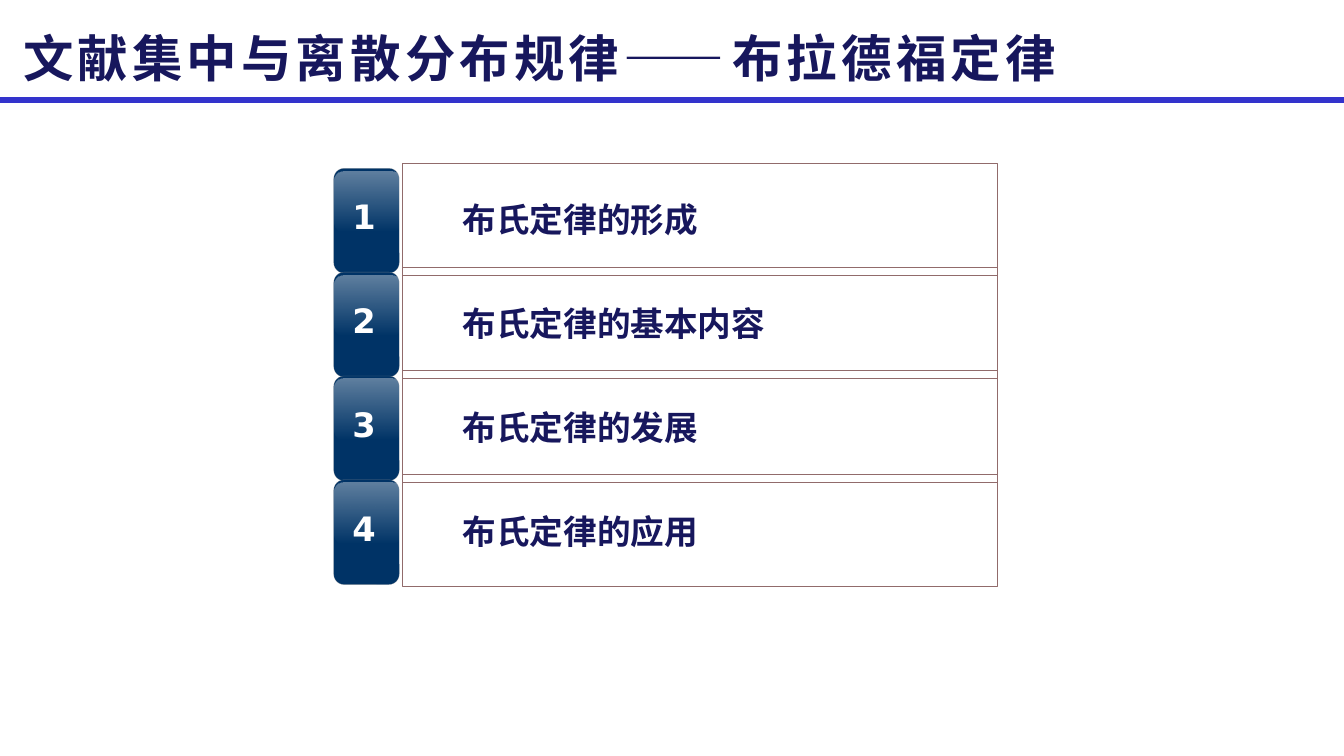
import pptx
import pptx.util
import pptx.dml.color
import pptx.enum.shapes
import pptx.enum.text
import pptx.oxml.ns
import pptx.oxml.xmlchemy
from dataclasses import dataclass

# Content
TITLE = "文献集中与离散分布规律——布拉德福定律"
ITEMS = ["布氏定律的形成", "布氏定律的基本内容", "布氏定律的发展", "布氏定律的应用"]

Inches = pptx.util.Inches
Pt = pptx.util.Pt
qn = pptx.oxml.ns.qn
make = pptx.oxml.xmlchemy.OxmlElement
Kind = pptx.enum.shapes.MSO_SHAPE
Align = pptx.enum.text.PP_ALIGN


@dataclass(frozen=True)
class Theme:
    ink: str = "17175D"
    rule: str = "3333CC"
    frame: str = "916B6B"
    tile: str = "003366"
    edge: str = "969696"
    white: str = "FFFFFF"
    latin: str = "Arial"
    han: str = "Noto Sans CJK SC"
    digit: str = "DejaVu Sans"
    head: int = 36
    body: int = 24


THEME = Theme()

# Layout in inches
TOP, STEP = 1.62, 1.03
FRAME = (3.99, 0, 5.9, 1.11)
TILE = (3.31, 0.05, 0.65, 1.04)
GLOSS = (3.32, 0.08, 0.65, 0.6)
DIGIT = (3.12, 0, 0.98, 1.05)


def color(code):
    return pptx.dml.color.RGBColor.from_string(code)


def place(box, top):
    left, down, width, height = box
    return [Inches(v) for v in (left, top + down, width, height)]


def fade(node, share):
    alpha = make("a:alpha")
    alpha.set("val", str(share * 1000))
    node.append(alpha)


def write(shape, text, size, ink, latin, align=Align.LEFT):
    frame = shape.text_frame
    frame.word_wrap = True
    frame.auto_size = pptx.enum.text.MSO_AUTO_SIZE.NONE
    frame.vertical_anchor = pptx.enum.text.MSO_ANCHOR.MIDDLE
    para = frame.paragraphs[0]
    para.alignment = align
    run = para.add_run()
    run.text = text
    font = run.font
    font.size, font.bold, font.name = Pt(size), True, latin
    font.color.rgb = color(ink)
    east = make("a:ea")
    east.set("typeface", THEME.han)
    run._r.rPr.find(qn("a:latin")).addnext(east)
    return para, run


def add_shape(slide, kind, box, top, bend=None):
    shape = slide.shapes.add_shape(kind, *place(box, top))
    shape.shadow.inherit = False
    if bend:
        shape.adjustments[0] = bend
    return shape


def add_frame(slide, text, top):
    shape = add_shape(slide, Kind.RECTANGLE, FRAME, top)
    shape.fill.background()
    shape.line.color.rgb = color(THEME.frame)
    shape.line.width = Pt(0.75)
    para, _ = write(shape, text, THEME.body, THEME.ink, THEME.han)
    props = para._p.get_or_add_pPr()
    props.set("marL", str(Inches(0.5)))
    props.set("indent", "0")


def add_tile(slide, number, top):
    # Dark tile
    tile = add_shape(slide, Kind.ROUNDED_RECTANGLE, TILE, top, 0.16)
    tile.fill.solid()
    tile.fill.fore_color.rgb = color(THEME.tile)
    tile.line.color.rgb = color(THEME.edge)
    tile.line.width = Pt(0.25)
    edge = tile._element.spPr.find(qn("a:ln"))
    fade(edge.find(".//" + qn("a:srgbClr")), 59)

    # Gloss that is brightest at the top
    gloss = add_shape(slide, Kind.ROUNDED_RECTANGLE, GLOSS, top, 0.14)
    gloss.line.fill.background()
    gloss.fill.gradient()
    gloss.fill.gradient_angle = 270
    for stop in gloss.fill.gradient_stops:
        stop.color.rgb = color(THEME.white)
    props = gloss._element.spPr
    for node, share in zip(props.findall(".//" + qn("a:srgbClr")), (0, 38)):
        fade(node, share)
    props.find(qn("a:xfrm")).set("flipV", "1")

    # Number
    label = slide.shapes.add_textbox(*place(DIGIT, top))
    write(label, str(number), THEME.body, THEME.white, THEME.digit, Align.CENTER)


def main():
    deck = pptx.Presentation()
    deck.slide_width, deck.slide_height = Inches(13.33), Inches(7.5)
    slide = deck.slides.add_slide(deck.slide_layouts[5])

    # Rule under the title
    rule = slide.shapes.add_connector(
        pptx.enum.shapes.MSO_CONNECTOR.STRAIGHT,
        0, Inches(0.99), deck.slide_width, Inches(0.99))
    rule.line.color.rgb = color(THEME.rule)
    rule.line.width = Pt(4.5)
    rule._element.spPr.append(make("a:effectLst"))

    # Title
    title = slide.shapes.title
    title.left, title.top, title.width, title.height = place((0.13, 0, 11.04, 1.14), 0)
    _, run = write(title, TITLE, THEME.head, THEME.ink, THEME.latin)
    run._r.rPr.set("spc", "300")

    # Numbered rows
    for row, text in enumerate(ITEMS):
        top = TOP + row * STEP
        add_frame(slide, text, top)
        add_tile(slide, row + 1, top)

    deck.save("out.pptx")


if __name__ == "__main__":
    main()
